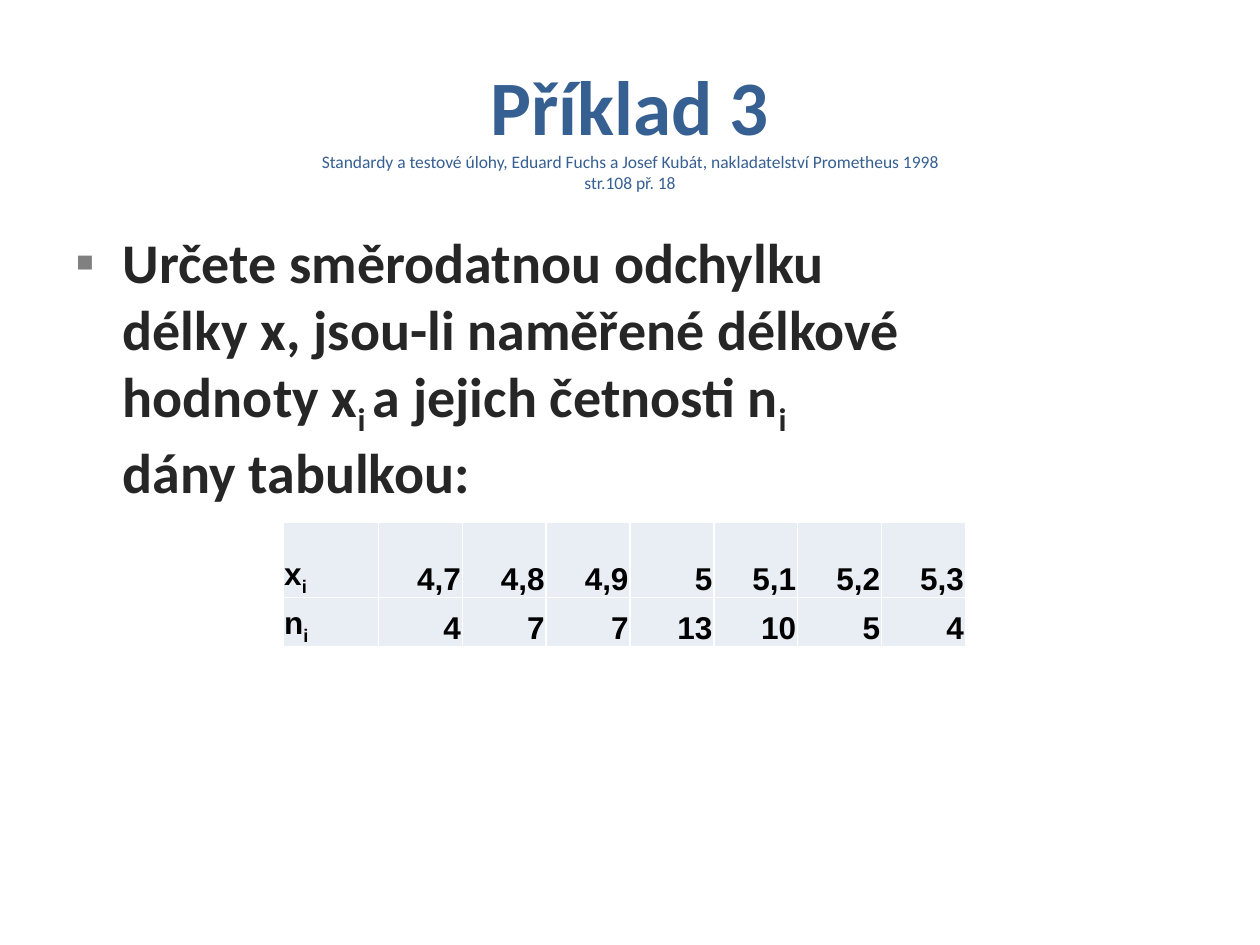
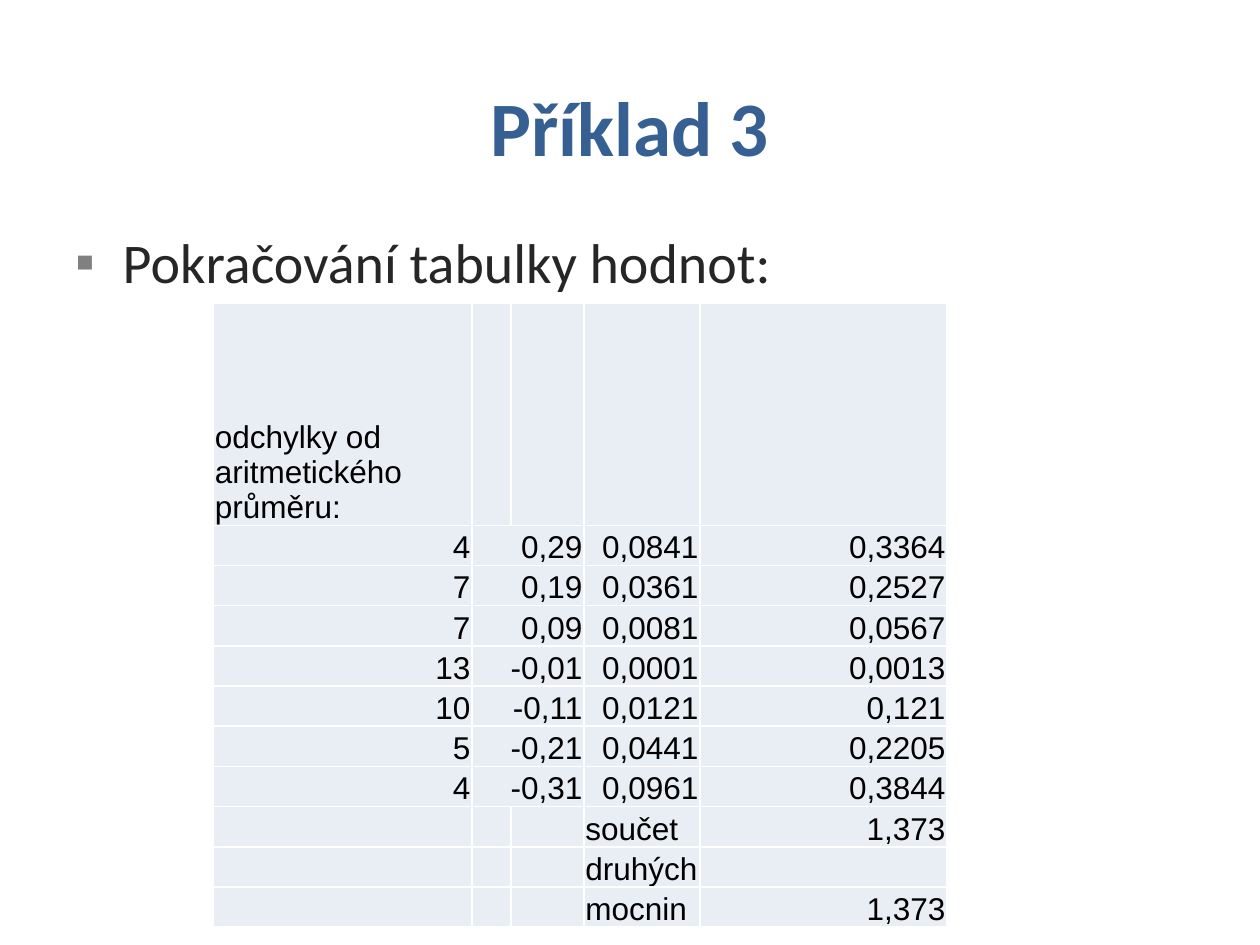
from copy import deepcopy
from dataclasses import dataclass

from lxml.etree import SubElement
from pptx import Presentation
from pptx.dml.color import RGBColor
from pptx.enum.text import MSO_ANCHOR as Anchor, MSO_AUTO_SIZE as AutoSize, PP_ALIGN as Align
from pptx.oxml.ns import qn
from pptx.util import Cm, Pt

TITLE_BLUE = RGBColor(0x37, 0x60, 0x92)
BODY_GREY = RGBColor(0x26, 0x26, 0x26)
BULLET_GREY = RGBColor(0x80, 0x80, 0x80)
CELL_FILL = RGBColor(0xE9, 0xED, 0xF4)
BORDER_WHITE = RGBColor(0xFF, 0xFF, 0xFF)
TABLE_BLACK = RGBColor(0, 0, 0)

TITLE_BOX = (1.27, 0.94, 22.86, 3.18)
BODY_BOX = (1.27, 4.45, 22.86, 13.28)
SPANNED = None


@dataclass(frozen=True)
class TableSpec:
    left: float
    top: float
    columns: list[float]
    row_heights: list[float]
    rows: list[list[str | None]]
    bold: bool = False


@dataclass(frozen=True)
class SlideSpec:
    body: str
    table: TableSpec
    citation: str = ""
    bold: bool = False


LENGTHS = ["4,7", "4,8", "4,9", "5", "5,1", "5,2", "5,3"]
COUNTS = ["4", "7", "7", "13", "10", "5", "4"]
DEVIATIONS = ["0,29", "0,19", "0,09", "-0,01", "-0,11", "-0,21", "-0,31"]
SQUARES = ["0,0841", "0,0361", "0,0081", "0,0001", "0,0121", "0,0441", "0,0961"]
WEIGHTED = ["0,3364", "0,2527", "0,0567", "0,0013", "0,121", "0,2205", "0,3844"]

MEASUREMENTS = TableSpec(
    left=5.7, top=10.52, columns=[1.93] + [1.69] * 7, row_heights=[1.52, 0.99],
    rows=[["x_i", *LENGTHS], ["n_i", *COUNTS]], bold=True,
)
DEVIATION_TABLE = TableSpec(
    left=4.3, top=6.12, columns=[5.21, 0.79, 1.47, 2.34, 4.98],
    row_heights=[4.47] + [0.81] * 10,
    rows=[
        ["odchylky od aritmetického průměru:", "", "", "", ""],
        *([count, deviation, SPANNED, square, weighted] for count, deviation, square, weighted
          in zip(COUNTS, DEVIATIONS, SQUARES, WEIGHTED)),
        ["", "", "", "součet", "1,373"],
        ["", "", "", "druhých", ""],
        ["", "", "", "mocnin", "1,373"],
    ],
)
SLIDES = [
    SlideSpec(
        body="Určete směrodatnou odchylku \ndélky x, jsou-li naměřené délkové \n"
             "hodnoty x_i _a jejich četnosti n_i \n_dány tabulkou:",
        table=MEASUREMENTS,
        citation="Standardy a testové úlohy, Eduard Fuchs a Josef Kubát, "
                 "nakladatelství Prometheus 1998\nstr.108 př. 18",
        bold=True,
    ),
    SlideSpec(body="Pokračování tabulky hodnot:", table=DEVIATION_TABLE),
]


def write(paragraph, text: str, *, size: float, color: RGBColor,
          font: str = "Calibri", bold: bool = False) -> None:
    """Underscores switch subscript on and off; newlines become line breaks."""
    for part, fragment in enumerate(text.split("_")):
        for line_number, line in enumerate(fragment.split("\n")):
            if line_number:
                paragraph.add_line_break()
                paragraph._p[-1].append(deepcopy(run.font._rPr))
            if not line:
                continue
            run = paragraph.add_run()
            run.text = line
            run.font.name = font
            run.font.size = Pt(size)
            run.font.bold = bold
            run.font.color.rgb = color
            if part % 2:
                run.font._rPr.set("baseline", "-25000")


def place(shape, box: tuple[float, float, float, float]) -> None:
    shape.left, shape.top, shape.width, shape.height = map(Cm, box)
    shape.text_frame.word_wrap = True
    shape.text_frame.auto_size = AutoSize.NONE


def fill_title(shape, citation: str) -> None:
    place(shape, TITLE_BOX)
    shape.text_frame.vertical_anchor = Anchor.MIDDLE
    paragraph = shape.text_frame.paragraphs[0]
    paragraph.alignment = Align.CENTER
    heading = "Příklad 3\n" if citation else "Příklad 3"
    write(paragraph, heading, size=44, color=TITLE_BLUE, bold=True)
    write(paragraph, citation, size=10, color=TITLE_BLUE)


def fill_body(shape, text: str, bold: bool) -> None:
    place(shape, BODY_BOX)
    paragraph = shape.text_frame.paragraphs[0]
    properties = paragraph._p.get_or_add_pPr()
    properties.set("marL", str(Cm(0.95)))
    properties.set("indent", str(-Cm(0.95)))
    bullet_color = SubElement(properties, qn("a:buClr"))
    SubElement(bullet_color, qn("a:srgbClr"), val=str(BULLET_GREY))
    SubElement(properties, qn("a:buFont"), typeface="Arial")
    SubElement(properties, qn("a:buChar"), char="▪")
    paragraph.space_before = Pt(0)
    write(paragraph, text, size=32, color=BODY_GREY, bold=bold)


def format_cell(cell) -> None:
    cell.margin_left = cell.margin_right = cell.margin_top = Cm(0.03)
    cell.margin_bottom = 0
    cell.vertical_anchor = Anchor.BOTTOM
    properties = cell._tc.get_or_add_tcPr()
    for side in ("a:lnL", "a:lnR", "a:lnT", "a:lnB"):
        line = SubElement(properties, qn(side), w=str(Pt(1)))
        solid = SubElement(line, qn("a:solidFill"))
        SubElement(solid, qn("a:srgbClr"), val=str(BORDER_WHITE))
    cell.fill.solid()
    cell.fill.fore_color.rgb = CELL_FILL


def add_data_table(slide, spec: TableSpec) -> None:
    table = slide.shapes.add_table(
        len(spec.rows), len(spec.columns), Cm(spec.left), Cm(spec.top),
        Cm(sum(spec.columns)), Cm(sum(spec.row_heights)),
    ).table
    table.first_row = table.horz_banding = False
    for column, width in zip(table.columns, spec.columns):
        column.width = Cm(width)
    for row, height in zip(table.rows, spec.row_heights):
        row.height = Cm(height)
    for row_index, values in enumerate(spec.rows):
        for column_index, value in enumerate(values):
            cell = table.cell(row_index, column_index)
            format_cell(cell)
            if value is SPANNED:
                table.cell(row_index, column_index - 1).merge(cell)
            elif value:
                paragraph = cell.text_frame.paragraphs[0]
                paragraph.alignment = Align.LEFT if value[0].isalpha() else Align.RIGHT
                write(paragraph, value, size=18, color=TABLE_BLACK, font="Arial", bold=spec.bold)


def main() -> None:
    presentation = Presentation()
    presentation.slide_width, presentation.slide_height = Cm(25.4), Cm(19.05)
    for spec in SLIDES:
        slide = presentation.slides.add_slide(presentation.slide_layouts[1])
        fill_title(slide.shapes.title, spec.citation)
        fill_body(slide.placeholders[1], spec.body, spec.bold)
        add_data_table(slide, spec.table)
    presentation.save("out.pptx")


if __name__ == "__main__":
    main()
